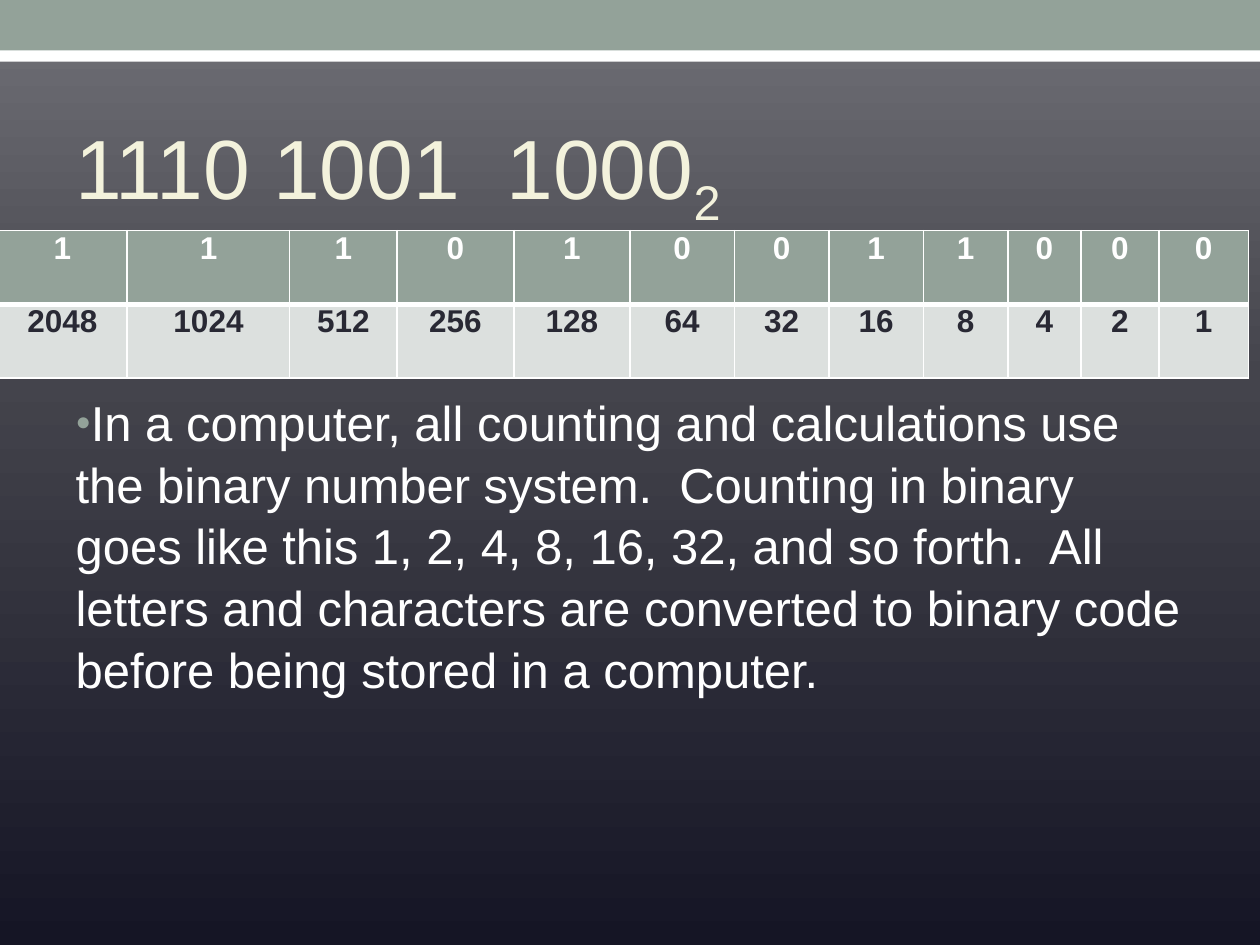
from copy import deepcopy
from dataclasses import dataclass

from lxml.etree import SubElement
from pptx import Presentation
from pptx.dml.color import RGBColor as RGB
from pptx.enum.shapes import MSO_SHAPE
from pptx.enum.text import MSO_ANCHOR, MSO_AUTO_SIZE, PP_ALIGN
from pptx.oxml.ns import qn
from pptx.util import Inches, Pt


@dataclass(frozen=True)
class Theme:
    font: str = "Arial"
    sage: str = "93A299"
    pale_sage: str = "DCE0DE"
    white: str = "FFFFFF"
    cream: str = "F3F2DC"
    ink: str = "292934"
    background: tuple = ((0, "717177"), (0.4, "44444C"), (1, "151525"))
    title_size: int = 48
    body_size: int = 28
    table_size: int = 18


theme = Theme()


def set_font(paragraph, size, color, bold=False):
    font = paragraph.font
    font.name, font.size, font.bold = theme.font, Pt(size), bold
    font.color.rgb = RGB.from_string(color)


def add_border(cell, side, width):
    """Draw one white cell edge; side is L, R, T or B, width is in points."""
    line = SubElement(cell._tc.get_or_add_tcPr(), qn(f"a:ln{side}"), w=str(Pt(width)))
    fill = SubElement(line, qn("a:solidFill"))
    SubElement(fill, qn("a:srgbClr"), val=theme.white)


presentation = Presentation()
presentation.slide_width = Inches(10)
presentation.slide_height = Inches(7.5)
slide = presentation.slides.add_slide(presentation.slide_layouts[1])

# Background gradient, top to bottom
background = slide.background.fill
background.gradient()
background.gradient_angle = 270
stop_list = slide.element.find(".//" + qn("a:gsLst"))
stop_list.append(deepcopy(stop_list[-1]))
for stop, (position, color) in zip(background.gradient_stops, theme.background):
    stop.position = position
    stop.color.rgb = RGB.from_string(color)

# Bars along the top edge
for top, height, color in ((0.24, 0.25, theme.white), (0, 0.4, theme.sage)):
    bar = slide.shapes.add_shape(
        MSO_SHAPE.RECTANGLE, 0, Inches(top), Inches(10), Inches(height))
    bar.shadow.inherit = False
    bar.fill.solid()
    bar.fill.fore_color.rgb = RGB.from_string(color)
    bar.line.fill.background()

# Title and body placeholders
title, body = slide.placeholders
for placeholder, top, height, anchor in (
        (title, 0.83, 1.08, MSO_ANCHOR.MIDDLE), (body, 3.04, 4.04, MSO_ANCHOR.TOP)):
    placeholder.left, placeholder.top = Inches(0.5), Inches(top)
    placeholder.width, placeholder.height = Inches(9), Inches(height)
    placeholder.text_frame.auto_size = MSO_AUTO_SIZE.NONE
    placeholder.text_frame.vertical_anchor = anchor

paragraph = title.text_frame.paragraphs[0]
paragraph.alignment = PP_ALIGN.LEFT
set_font(paragraph, theme.title_size, theme.cream)
paragraph.add_run().text = "1110 1001  1000"
base = paragraph.add_run()
base.text = "2"
base._r.get_or_add_rPr().set("baseline", "-25000")

paragraph = body.text_frame.paragraphs[0]
paragraph.text = (
    "In a computer, all counting and calculations use the binary number system.  "
    "Counting in binary goes like this 1, 2, 4, 8, 16, 32, and so forth.  "
    "All letters and characters are converted to binary code before being stored "
    "in a computer.")
paragraph.line_spacing = 1.05
paragraph.space_before = Pt(0)
properties = paragraph._p.get_or_add_pPr()
properties.set("marL", "0")
properties.set("indent", "0")
bullet_color = SubElement(properties, qn("a:buClr"))
SubElement(bullet_color, qn("a:srgbClr"), val=theme.sage)
SubElement(properties, qn("a:buSzPct"), val="52000")
SubElement(properties, qn("a:buFont"), typeface=theme.font)
SubElement(properties, qn("a:buChar"), char="●")
set_font(paragraph, theme.body_size, theme.white)

# Binary digits above their place values
digits = "111010011000"
place_values = [str(2 ** power) for power in reversed(range(len(digits)))]
column_widths = (1.03, 1.29, 0.85, 0.93, 0.92, 0.83, 0.75, 0.75, 0.67, 0.58, 0.62, 0.71)
rows = (
    (digits, theme.sage, theme.white, {"L": 1, "R": 1, "T": 1, "B": 3}),
    (place_values, theme.pale_sage, theme.ink, {"L": 1, "R": 1, "T": 3, "B": 1}),
)
table = slide.shapes.add_table(
    len(rows), len(digits), Inches(-0.02), Inches(1.83),
    Inches(sum(column_widths)), Inches(1.17)).table
for column, width in zip(table.columns, column_widths):
    column.width = Inches(width)
for row, (values, fill, color, borders) in zip(table.rows, rows):
    for cell, value in zip(row.cells, values):
        cell.margin_left = cell.margin_right = cell.margin_top = cell.margin_bottom = 0
        for side, width in borders.items():
            add_border(cell, side, width)
        cell.fill.solid()
        cell.fill.fore_color.rgb = RGB.from_string(fill)
        paragraph = cell.text_frame.paragraphs[0]
        paragraph.text = value
        paragraph.alignment = PP_ALIGN.CENTER
        set_font(paragraph, theme.table_size, color, bold=True)

presentation.save("out.pptx")
